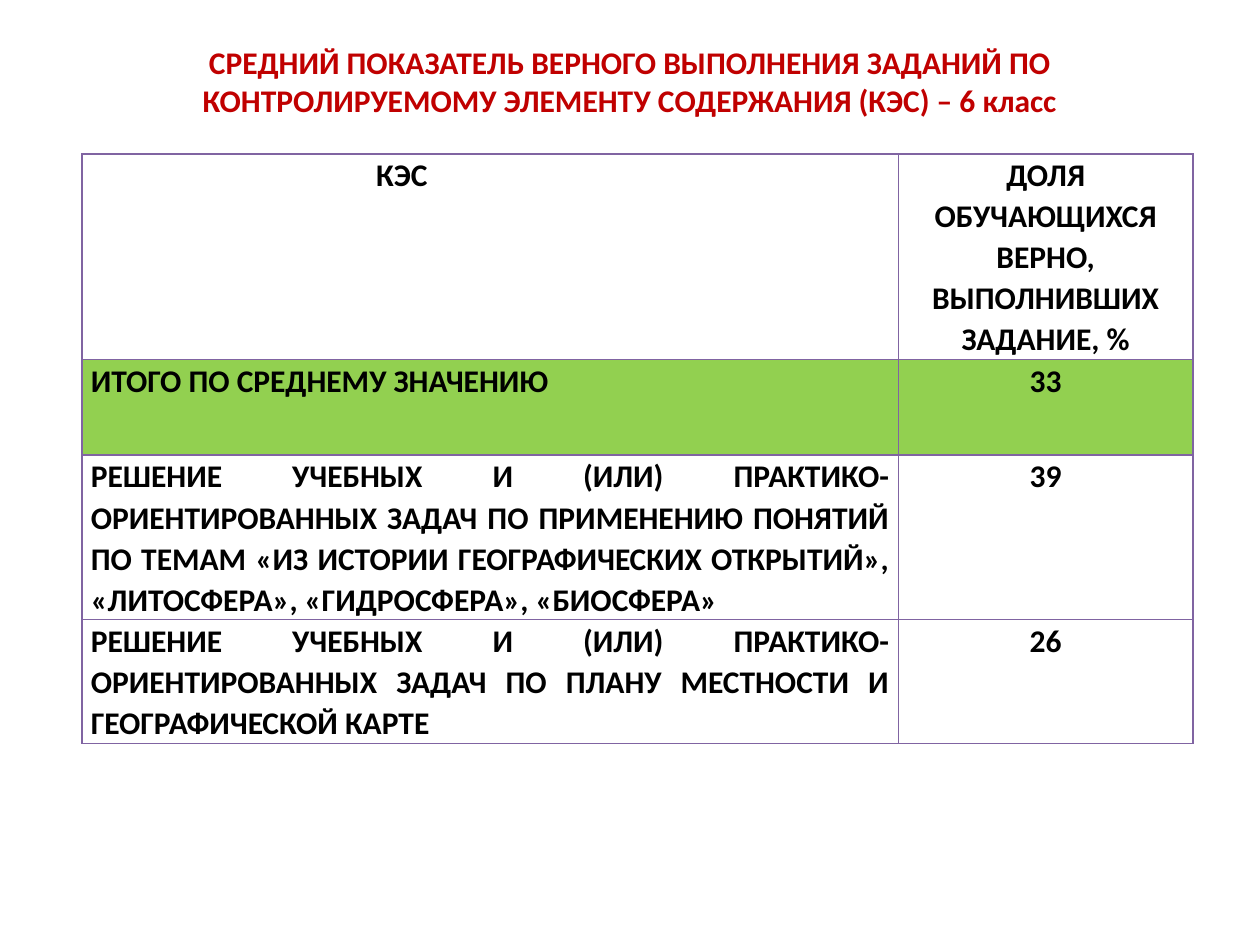
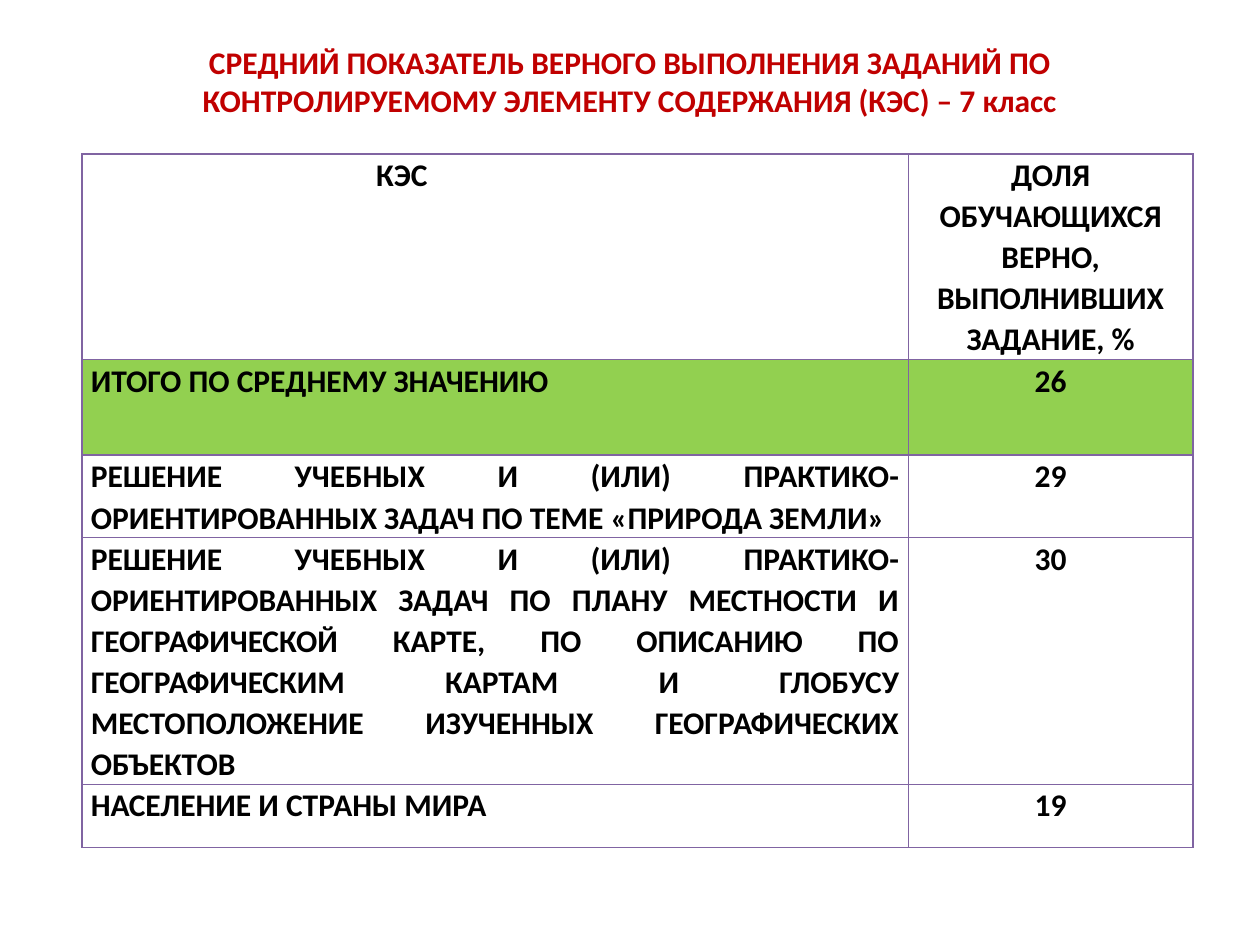
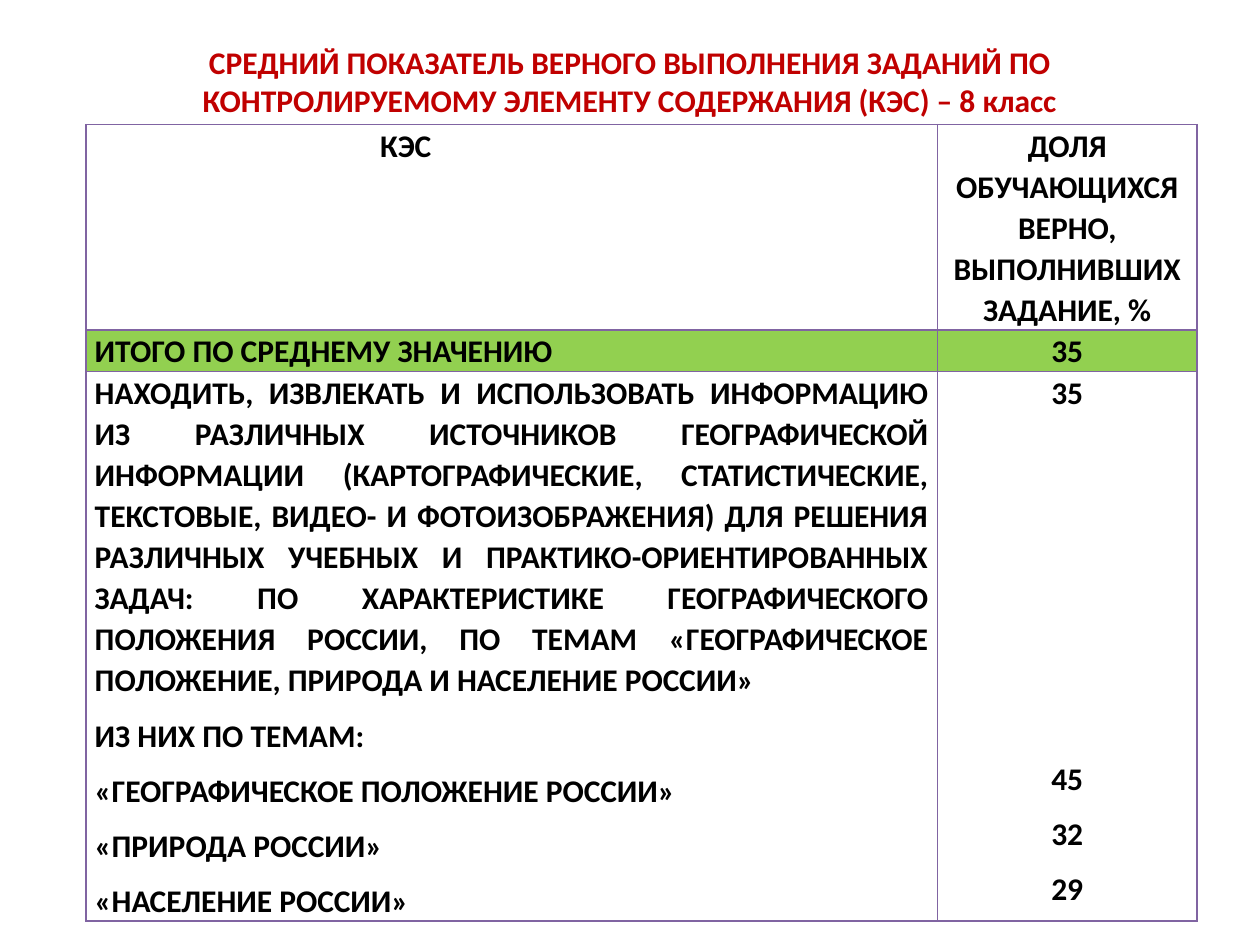
from lxml.etree import SubElement
from pptx import Presentation
from pptx.dml.color import RGBColor
from pptx.enum.text import MSO_ANCHOR, PP_ALIGN
from pptx.oxml.ns import qn
from pptx.util import Cm, Pt

FONT = "Calibri"
RED, BLACK, WHITE, GREEN, PURPLE = "C00000", "000000", "FFFFFF", "92D050", "8064A2"
TITLE = ("СРЕДНИЙ ПОКАЗАТЕЛЬ ВЕРНОГО ВЫПОЛНЕНИЯ ЗАДАНИЙ ПО "
         "КОНТРОЛИРУЕМОМУ ЭЛЕМЕНТУ СОДЕРЖАНИЯ (КЭС) – {} класс")
SHARE = "ДОЛЯ ОБУЧАЮЩИХСЯ ВЕРНО, ВЫПОЛНИВШИХ ЗАДАНИЕ, %"
TOTAL = "ИТОГО ПО СРЕДНЕМУ ЗНАЧЕНИЮ"
SOLVE = "РЕШЕНИЕ УЧЕБНЫХ И (ИЛИ) ПРАКТИКО-ОРИЕНТИРОВАННЫХ ЗАДАЧ ПО "
MAP = SOLVE + "ПЛАНУ МЕСТНОСТИ И ГЕОГРАФИЧЕСКОЙ КАРТЕ"
TABS = [(6.27, "ctr"), (7.72, "l"), (8.71, "l")]
WIDTH = 22.4
HEAD = 4.14

# Each row holds its height in cm, the topics and the shares.
SIX = [
    (1.93, TOTAL, "33"),
    (3.3, SOLVE + "ПРИМЕНЕНИЮ ПОНЯТИЙ ПО ТЕМАМ «ИЗ ИСТОРИИ ГЕОГРАФИЧЕСКИХ "
     "ОТКРЫТИЙ», «ЛИТОСФЕРА», «ГИДРОСФЕРА», «БИОСФЕРА»", "39"),
    (2.49, MAP, "26"),
]
SEVEN = [
    (1.93, TOTAL, "26"),
    (1.65, SOLVE + "ТЕМЕ «ПРИРОДА ЗЕМЛИ»", "29"),
    (4.97, MAP + ", ПО ОПИСАНИЮ ПО ГЕОГРАФИЧЕСКИМ КАРТАМ И ГЛОБУСУ "
     "МЕСТОПОЛОЖЕНИЕ ИЗУЧЕННЫХ ГЕОГРАФИЧЕСКИХ ОБЪЕКТОВ", "30"),
    (1.27, "НАСЕЛЕНИЕ И СТРАНЫ МИРА", "19"),
]
EIGHT = [
    (0.83, TOTAL, "35"),
    (11.07, "НАХОДИТЬ, ИЗВЛЕКАТЬ И ИСПОЛЬЗОВАТЬ ИНФОРМАЦИЮ ИЗ РАЗЛИЧНЫХ "
     "ИСТОЧНИКОВ ГЕОГРАФИЧЕСКОЙ ИНФОРМАЦИИ (КАРТОГРАФИЧЕСКИЕ, "
     "СТАТИСТИЧЕСКИЕ, ТЕКСТОВЫЕ, ВИДЕО- И ФОТОИЗОБРАЖЕНИЯ) ДЛЯ РЕШЕНИЯ "
     "РАЗЛИЧНЫХ УЧЕБНЫХ И ПРАКТИКО-ОРИЕНТИРОВАННЫХ ЗАДАЧ: ПО "
     "ХАРАКТЕРИСТИКЕ ГЕОГРАФИЧЕСКОГО ПОЛОЖЕНИЯ РОССИИ, ПО ТЕМАМ "
     "«ГЕОГРАФИЧЕСКОЕ ПОЛОЖЕНИЕ, ПРИРОДА И НАСЕЛЕНИЕ РОССИИ»\n"
     "ИЗ НИХ ПО ТЕМАМ:\n«ГЕОГРАФИЧЕСКОЕ ПОЛОЖЕНИЕ РОССИИ»\n"
     "«ПРИРОДА РОССИИ»\n«НАСЕЛЕНИЕ РОССИИ»", "35\n45\n32\n29"),
]


def paint(color, value):
    color.rgb = RGBColor.from_string(value)


def write(frame, text, color=BLACK, align=PP_ALIGN.CENTER, space=None,
          after=None, gap=None, tabs=()):
    """Write one paragraph per line; gap is the space before the second."""
    for i, line in enumerate(text.split("\n")):
        para = frame.add_paragraph() if i else frame.paragraphs[0]
        para.alignment = align
        para.line_spacing = space
        para.space_after = after
        if gap and i == 1:
            para.space_before = Pt(gap)
        if tabs:
            stops = SubElement(para._p.get_or_add_pPr(), qn("a:tabLst"))
            for pos, kind in tabs:
                SubElement(stops, qn("a:tab"), pos=str(Cm(pos)), algn=kind)
        run = para.add_run()
        run.text = line
        run.font.name = FONT
        run.font.size = Pt(18)
        run.font.bold = True
        paint(run.font.color, color)


def border(cell):
    props = cell._tc.get_or_add_tcPr()
    for side in "LRTB":
        line = SubElement(props, qn("a:ln" + side), w=str(Pt(1)))
        fill = SubElement(line, qn("a:solidFill"))
        SubElement(fill, qn("a:srgbClr"), val=PURPLE)


def fill_cell(cell, text, back, **style):
    cell.margin_left = cell.margin_right = Cm(0.18)
    cell.margin_top = cell.margin_bottom = 0
    border(cell)
    cell.fill.solid()
    paint(cell.fill.fore_color, back)
    write(cell.text_frame, text, space=1.07, after=Pt(8), **style)


def add_title(slide, grade):
    title = slide.shapes.title
    title.left, title.top = Cm(1.27), Cm(0.76)
    title.width, title.height = Cm(22.86), Cm(1.75)
    title.text_frame.vertical_anchor = MSO_ANCHOR.MIDDLE
    write(title.text_frame, TITLE.format(grade), color=RED)


def add_grid(slide, left, top, wide, rows):
    """Add the table; wide is the width of the topic column."""
    rows = [(HEAD, "\tКЭС\t", SHARE)] + rows
    high = sum(row[0] for row in rows)
    grid = slide.shapes.add_table(len(rows), 2, Cm(left), Cm(top),
                                  Cm(WIDTH), Cm(high)).table
    grid.first_row = grid.horz_banding = False
    grid.columns[0].width = Cm(wide)
    grid.columns[1].width = Cm(WIDTH - wide)
    for i, (tall, topic, share) in enumerate(rows):
        grid.rows[i].height = Cm(tall)
        back = GREEN if topic == TOTAL else WHITE
        fill_cell(grid.cell(i, 0), topic, back, tabs=() if i else TABS,
                  align=PP_ALIGN.JUSTIFY if i else PP_ALIGN.LEFT)
        fill_cell(grid.cell(i, 1), share, back, gap=189.5)


def main():
    deck = Presentation()
    deck.slide_width, deck.slide_height = Cm(25.4), Cm(19.05)
    for grade, left, top, wide, rows in [
        (6, 1.65, 3.1, 16.46, SIX),
        (7, 1.65, 3.1, 16.66, SEVEN),
        (8, 1.73, 2.51, 17.17, EIGHT),
    ]:
        slide = deck.slides.add_slide(deck.slide_layouts[5])
        add_title(slide, grade)
        add_grid(slide, left, top, wide, rows)
    deck.save("out.pptx")


if __name__ == "__main__":
    main()
